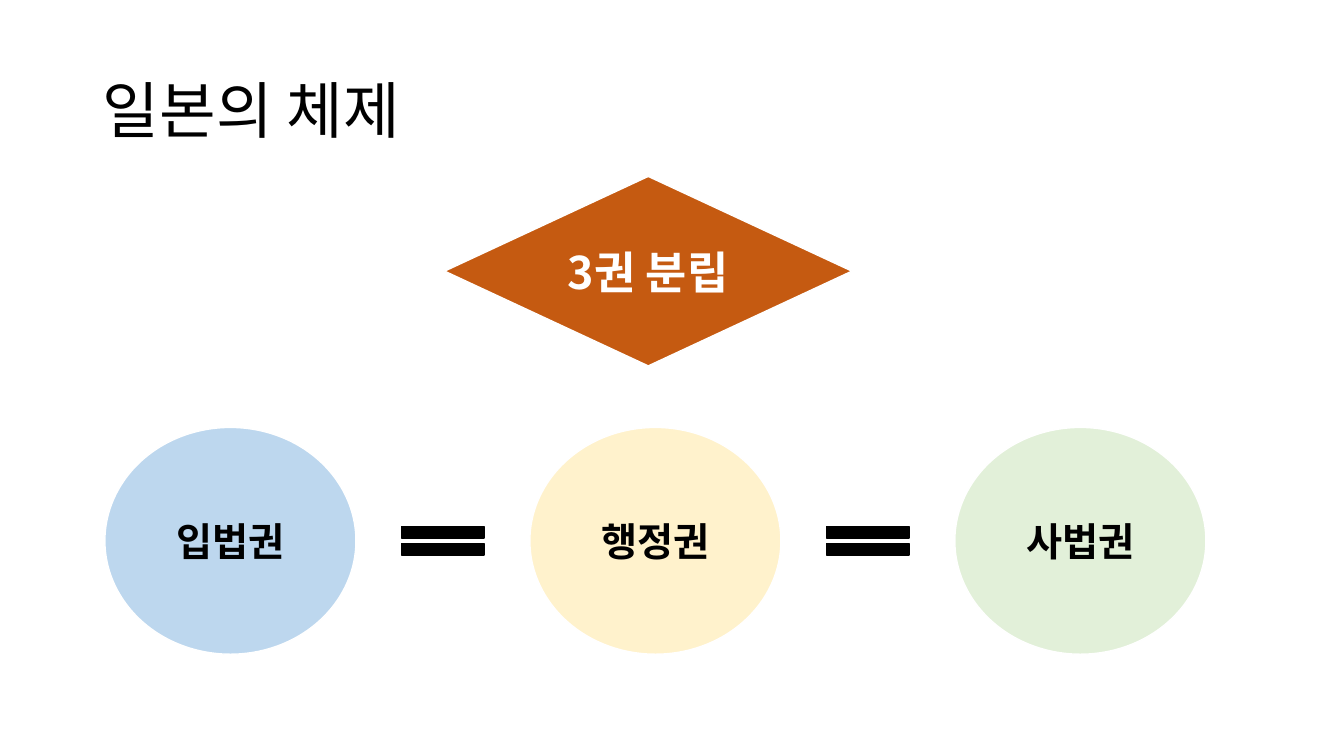
from lxml import etree
from pptx import Presentation
from pptx import util as u
from pptx.dml import color
from pptx.enum import shapes, text
from pptx.oxml import ns

FONT = "Noto Sans CJK KR"
TITLE = "일본의 체제"
PRINCIPLE = "3권 분립"
POWERS = [("입법권", "BDD7EE"), ("행정권", "FFF2CC"), ("사법권", "E2F0D9")]

POWER_LEFT, POWER_TOP, POWER_W, POWER_H = 1.04, 4.24, 2.49, 2.25
POWER_STEP = 4.215
EQUAL_W, EQUAL_H = 1.11, 0.48


def rgb(value):
    return color.RGBColor.from_string(value)


def write(tf, content, size, hex_color, align, bold=False):
    tf.word_wrap = True
    tf.vertical_anchor = text.MSO_ANCHOR.MIDDLE
    p = tf.paragraphs[0]
    p.alignment = align
    r = p.add_run()
    r.text = content
    r.font.name = FONT
    r.font.size = u.Pt(size)
    r.font.bold = bold
    r.font.color.rgb = rgb(hex_color)
    ea = etree.SubElement(r.font._element, ns.qn("a:ea"))
    ea.set("typeface", FONT)
    return p


def add_shape(s, kind, box, fill, line="FFFFFF"):
    sp = s.shapes.add_shape(kind, *map(u.Inches, box))
    sp.shadow.inherit = False
    sp.fill.solid()
    sp.fill.fore_color.rgb = rgb(fill)
    sp.line.color.rgb = rgb(line)
    sp.line.width = u.Pt(1)
    return sp


def main():
    prs = Presentation()
    prs.slide_width, prs.slide_height = u.Inches(13.33), u.Inches(7.5)
    s = prs.slides.add_slide(prs.slide_layouts[5])

    title = s.shapes.title
    title.left, title.top, title.width, title.height = map(
        u.Inches, (0.92, 0.4, 11.5, 1.45))
    p = write(title.text_frame, TITLE, 44, "000000", text.PP_ALIGN.LEFT)
    p.line_spacing = 0.9

    kinds = shapes.MSO_SHAPE
    center = text.PP_ALIGN.CENTER
    sp = add_shape(s, kinds.FLOWCHART_DECISION, (4.41, 1.75, 4.04, 1.88), "C55A11")
    write(sp.text_frame, PRINCIPLE, 32, "FFFFFF", center, True)

    equal_top = POWER_TOP + (POWER_H - EQUAL_H) / 2
    equal_offset = (POWER_W + POWER_STEP - EQUAL_W) / 2
    for i, (name, fill) in enumerate(POWERS):
        left = POWER_LEFT + i * POWER_STEP
        sp = add_shape(s, kinds.OVAL, (left, POWER_TOP, POWER_W, POWER_H), fill)
        write(sp.text_frame, name, 28, "000000", center, True)
        if i < len(POWERS) - 1:
            box = (left + equal_offset, equal_top, EQUAL_W, EQUAL_H)
            add_shape(s, kinds.MATH_EQUAL, box, "000000", "000000")

    prs.save("out.pptx")


if __name__ == "__main__":
    main()
